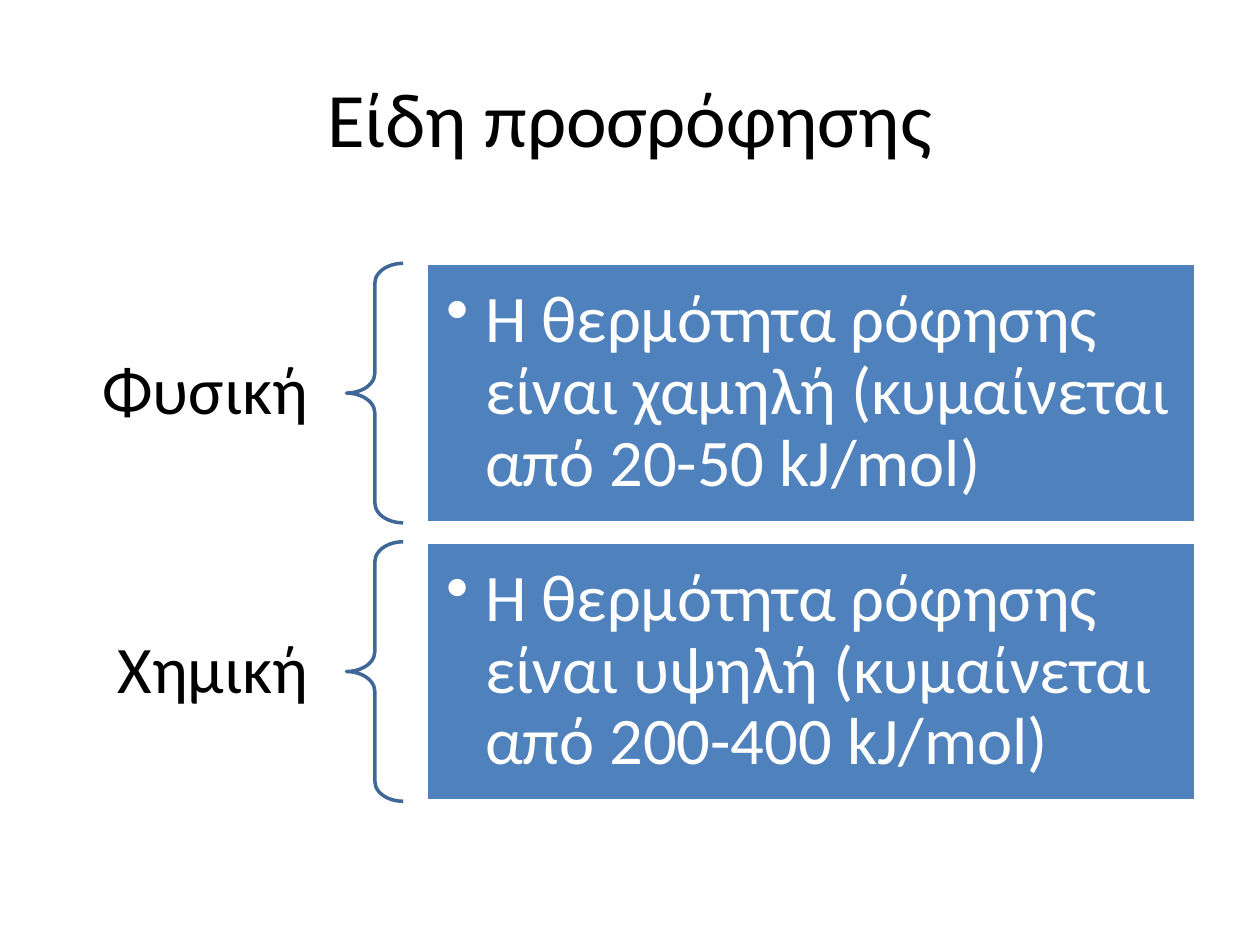
from dataclasses import dataclass

from lxml.etree import SubElement
from pptx import Presentation
from pptx.dml.color import RGBColor as Color
from pptx.enum.shapes import MSO_SHAPE as Shape
from pptx.enum.text import MSO_ANCHOR as Anchor, PP_ALIGN as Align
from pptx.oxml.ns import qn
from pptx.util import Pt

EMU_PER_PX = 9144


@dataclass(frozen=True)
class Theme:
    font: str = "Calibri"
    title_size: int = 44
    body_size: int = 38
    line_width: int = 2
    ink: Color = Color(0x00, 0x00, 0x00)
    paper: Color = Color(0xFF, 0xFF, 0xFF)
    panel: Color = Color(0x4F, 0x81, 0xBD)
    brace: Color = Color(0x3F, 0x67, 0x97)


THEME = Theme()


@dataclass(frozen=True)
class Box:
    left: int
    top: int
    width: int
    height: int

    def emu(self):
        return [px(n) for n in (self.left, self.top, self.width, self.height)]

    def inner(self, left, top, width, height):
        return Box(self.left + left, self.top + top, width, height)


def px(length):
    return length * EMU_PER_PX


def write(shape, text, size, color, align, inset_x, inset_y):
    frame = shape.text_frame
    frame.word_wrap = True
    frame.vertical_anchor = Anchor.MIDDLE
    frame.margin_left = frame.margin_right = px(inset_x)
    frame.margin_top = frame.margin_bottom = px(inset_y)
    para = frame.paragraphs[0]
    para.text = text
    para.alignment = align
    para.font.name = THEME.font
    para.font.size = Pt(size)
    para.font.color.rgb = color
    return para


def add_bullet(para, indent):
    props = para._p.get_or_add_pPr()
    props.set("marL", str(px(indent)))
    props.set("indent", str(-px(indent)))
    bullet = SubElement(props, qn("a:buChar"))
    bullet.set("char", "•")
    props.insert_element_before(bullet, "a:tabLst", "a:defRPr", "a:extLst")


def add_outlined(page, kind, box, color):
    shape = page.shapes.add_shape(kind, *box.emu())
    shape.shadow.inherit = False
    shape.line.color.rgb = color
    shape.line.width = Pt(THEME.line_width)
    return shape


def add_title(page, box, text):
    title = page.shapes.title
    title.left, title.top, title.width, title.height = box.emu()
    write(title, text, THEME.title_size, THEME.ink, Align.CENTER, 10, 5)


def add_kind_row(page, box, name, description):
    label_height = 82
    label_top = (box.height - label_height) // 2
    label = page.shapes.add_textbox(*box.inner(0, label_top, 225, label_height).emu())
    para = write(label, name, THEME.body_size, THEME.ink, Align.RIGHT, 30, 11)
    para.line_spacing = 0.9

    brace = add_outlined(page, Shape.LEFT_BRACE, box.inner(225, 0, 45, box.height), THEME.brace)
    brace.fill.background()
    brace.adjustments[0] = 0.35

    panel = add_outlined(page, Shape.RECTANGLE, box.inner(288, 0, 611, box.height), THEME.paper)
    panel.fill.solid()
    panel.fill.fore_color.rgb = THEME.panel
    para = write(panel, description, THEME.body_size, THEME.paper, Align.LEFT, 16, 16)
    para.line_spacing = 0.9
    add_bullet(para, 31)


def main():
    deck = Presentation()
    deck.slide_width, deck.slide_height = px(1000), px(750)
    page = deck.slides.add_slide(deck.slide_layouts[5])
    add_title(page, Box(50, 30, 900, 125), "Είδη προσρόφησης")

    kinds = [
        ("Φυσική", "H θερμότητα ρόφησης είναι χαμηλή (κυμαίνεται από 20-50 kJ/mol)"),
        ("Χημική", "H θερμότητα ρόφησης είναι υψηλή (κυμαίνεται από 200-400 kJ/mol)"),
    ]
    first_row, pitch = Box(50, 209, 899, 206), 221
    for index, (name, description) in enumerate(kinds):
        row = first_row.inner(0, index * pitch, first_row.width, first_row.height)
        add_kind_row(page, row, name, description)
    deck.save("out.pptx")


if __name__ == "__main__":
    main()
